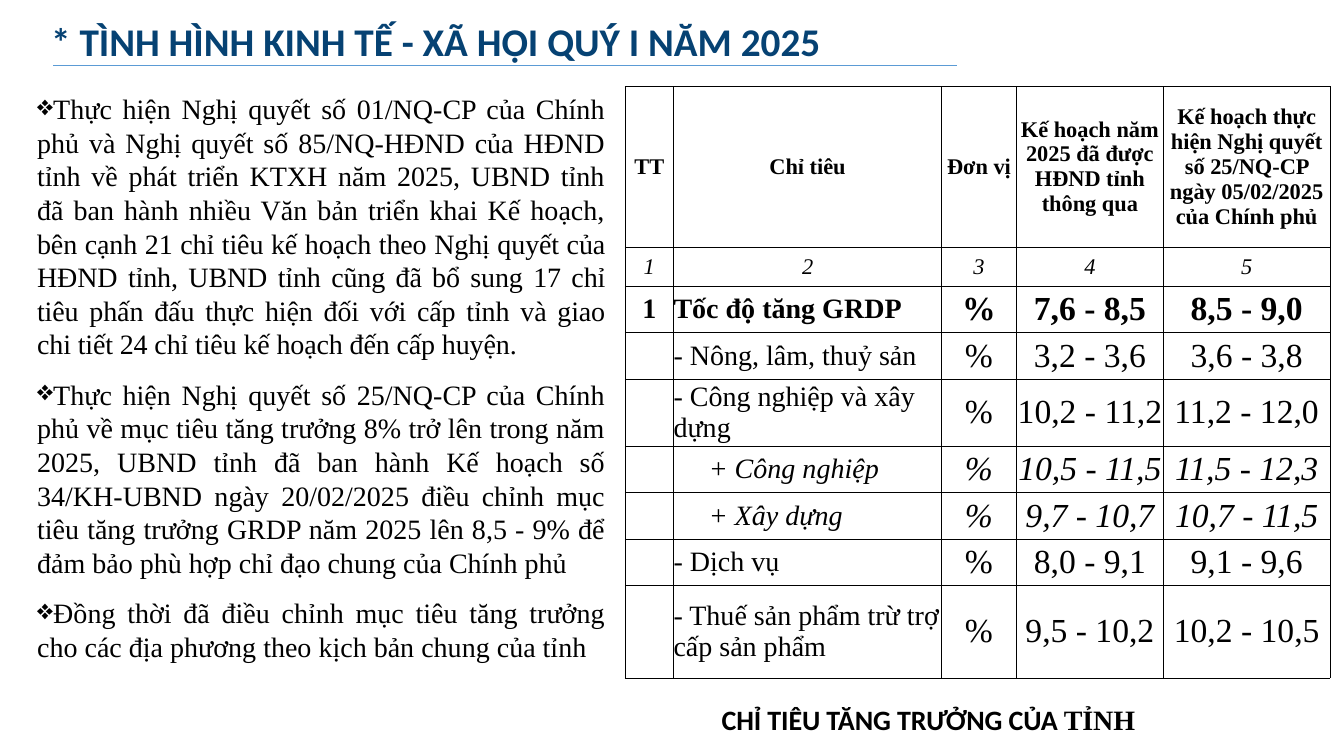
import pptx
import pptx.chart.data
import pptx.dml.color
import pptx.enum.shapes
import pptx.enum.text
import pptx.oxml.ns
import pptx.util
from lxml import etree

Inches = pptx.util.Inches
Pt = pptx.util.Pt
ALIGN = pptx.enum.text.PP_ALIGN
COLORS = {"title": "064273", "rule": "5B9BD5", "text": "000000"}
SERIF, SANS = "Times New Roman", "Calibri"

TITLE = "* TÌNH HÌNH KINH TẾ - XÃ HỘI QUÝ I NĂM 2025"
POINTS = [
    [("Thực hiện Nghị quyết số 01/NQ-CP của Chính phủ và Nghị quyết số 85/NQ-HĐND của HĐND tỉnh "
      "về phát triển KTXH năm 2025, UBND tỉnh đã ban hành nhiều Văn bản triển khai Kế hoạch, ", 0),
     ("bên cạnh 21 chỉ tiêu kế hoạch theo Nghị quyết của HĐND tỉnh, UBND tỉnh cũng đã bổ sung "
      "17 chỉ tiêu phấn đấu thực hiện đối với cấp tỉnh và giao chi tiết 24 chỉ tiêu kế hoạch "
      "đến cấp huyện.", -0.1)],
    [("Thực hiện Nghị quyết số 25/NQ-CP của Chính phủ về mục tiêu tăng trưởng 8% trở lên trong "
      "năm 2025, UBND tỉnh đã ban hành Kế hoạch số 34/KH-UBND ngày 20/02/2025 điều chỉnh mục "
      "tiêu tăng trưởng GRDP năm 2025 lên 8,5 - 9% để đảm bảo phù hợp chỉ đạo chung của "
      "Chính phủ", 0)],
    [("Đồng thời đã điều chỉnh mục tiêu tăng trưởng cho các địa phương theo kịch bản chung "
      "của tỉnh", 0)],
]
CAPTION = [("CHỈ TIÊU TĂNG TRƯỞNG CỦA ", SANS), ("TỈNH", SERIF)]
HEADER = ["TT", "Chỉ tiêu", "Đơn vị", "Kế hoạch năm 2025 đã được HĐND tỉnh thông qua",
          "Kế hoạch thực hiện Nghị quyết số 25/NQ-CP ngày 05/02/2025 của Chính phủ"]
NUMBERING = ["1", "2", "3", "4", "5"]
INDICATORS = [
    ("total", "1", "Tốc độ tăng GRDP", "7,6 - 8,5", "8,5 - 9,0"),
    ("sector", "", "- Nông, lâm, thuỷ sản", "3,2 - 3,6", "3,6 - 3,8"),
    ("sector", "", "- Công nghiệp và xây dựng", "10,2 - 11,2", "11,2 - 12,0"),
    ("branch", "", "+ Công nghiệp", "10,5 - 11,5", "11,5 - 12,3"),
    ("branch", "", "+ Xây dựng", "9,7 - 10,7", "10,7 - 11,5"),
    ("sector", "", "- Dịch vụ", "8,0 - 9,1", "9,1 - 9,6"),
    ("sector", "", "- Thuế sản phẩm trừ trợ cấp sản phẩm", "9,5 - 10,2", "10,2 - 10,5"),
]
ROWS = [("header", HEADER), ("numbering", NUMBERING)] + [
    (level, [order, name, "%", plan, target])
    for level, order, name, plan, target in INDICATORS]
COLUMN_WIDTHS = [0.48, 2.66, 0.74, 1.46, 1.65]
ROW_HEIGHTS = [1.59, 0.39] + [0.46] * 6 + [0.92]


def style(font, size, color="text", face=SERIF, bold=False, italic=False):
    font.name, font.size, font.bold, font.italic = face, Pt(size), bold, italic
    font.color.rgb = pptx.dml.color.RGBColor.from_string(COLORS[color])


def track(run, points):
    if points:
        run._r.get_or_add_rPr().set("spc", str(round(points * 100)))


def add_text(slide, left, top, width, height):
    frame = slide.shapes.add_textbox(*map(Inches, (left, top, width, height))).text_frame
    frame.word_wrap = True
    return frame


def add_bullet(paragraph):
    properties = paragraph._p.get_or_add_pPr()
    properties.set("marL", "0")
    properties.set("indent", str(-Inches(0.38)))
    bullet = etree.SubElement(properties, pptx.oxml.ns.qn("a:buChar"))
    bullet.set("char", "❖")


def add_borders(cell):
    properties = cell._tc.get_or_add_tcPr()
    for side in ("a:lnL", "a:lnR", "a:lnT", "a:lnB"):
        border = etree.SubElement(properties, pptx.oxml.ns.qn(side), w=str(Pt(0.5)))
        fill = etree.SubElement(border, pptx.oxml.ns.qn("a:solidFill"))
        etree.SubElement(fill, pptx.oxml.ns.qn("a:srgbClr"), val=COLORS["text"])


def add_points(slide):
    frame = add_text(slide, 0.27, 0.86, 5.83, 5.82)
    for index, point in enumerate(POINTS):
        paragraph = frame.add_paragraph() if index else frame.paragraphs[0]
        paragraph.alignment = ALIGN.JUSTIFY
        paragraph.line_spacing = Pt(24)
        paragraph.space_after = Pt(12)
        add_bullet(paragraph)
        for text, spacing in point:
            run = paragraph.add_run()
            run.text = text
            style(run.font, 20)
            track(run, spacing)


def add_title(slide):
    frame = add_text(slide, 0.41, 0.12, 12.3, 0.52)
    frame.text = TITLE
    style(frame.paragraphs[0].runs[0].font, 28, "title", SANS, bold=True)
    rule = slide.shapes.add_connector(
        pptx.enum.shapes.MSO_CONNECTOR.STRAIGHT, *map(Inches, (0.53, 0.65, 9.49, 0.65)))
    rule.line.color.rgb = pptx.dml.color.RGBColor.from_string(COLORS["rule"])
    rule.line.width = Pt(1)
    etree.SubElement(rule._element.spPr, pptx.oxml.ns.qn("a:effectLst"))


def add_indicators(slide):
    table = slide.shapes.add_table(
        len(ROWS), len(COLUMN_WIDTHS), Inches(6.2), Inches(0.86),
        Inches(sum(COLUMN_WIDTHS)), Inches(sum(ROW_HEIGHTS))).table
    table.first_row = table.horz_banding = False
    for column, width in zip(table.columns, COLUMN_WIDTHS):
        column.width = Inches(width)
    for row, height, (level, texts) in zip(table.rows, ROW_HEIGHTS, ROWS):
        row.height = Inches(height)
        heading = level in ("header", "numbering")
        for index, (cell, text) in enumerate(zip(row.cells, texts)):
            named = index == 1 and not heading
            cell.margin_left = cell.margin_right = cell.margin_top = cell.margin_bottom = 0
            if named and level == "branch":
                cell.margin_left = Inches(0.35)
            cell.vertical_anchor = pptx.enum.text.MSO_ANCHOR.MIDDLE
            add_borders(cell)
            cell.fill.background()
            cell.text_frame.text = text
            paragraph = cell.text_frame.paragraphs[0]
            paragraph.alignment = ALIGN.LEFT if named else ALIGN.CENTER
            size = 16 if heading else 20 if index < 2 else 24
            fonts = [run.font for run in paragraph.runs] or [paragraph.font]
            for font in fonts:
                style(font, size, bold=level in ("header", "total"),
                      italic=level in ("numbering", "branch"))


def add_caption(slide):
    paragraph = add_text(slide, 7.06, 6.85, 5.83, 0.41).paragraphs[0]
    paragraph.alignment = ALIGN.JUSTIFY
    paragraph.line_spacing = 1.2
    for text, face in CAPTION:
        run = paragraph.add_run()
        run.text = text
        style(run.font, 20, face=face, bold=True)
        track(run, -0.1)


def main():
    deck = pptx.Presentation()
    deck.slide_width, deck.slide_height = Inches(13.33), Inches(7.5)
    slide = deck.slides.add_slide(deck.slide_layouts[6])
    add_points(slide)
    add_title(slide)
    add_indicators(slide)
    add_caption(slide)
    deck.save("out.pptx")


if __name__ == "__main__":
    main()
